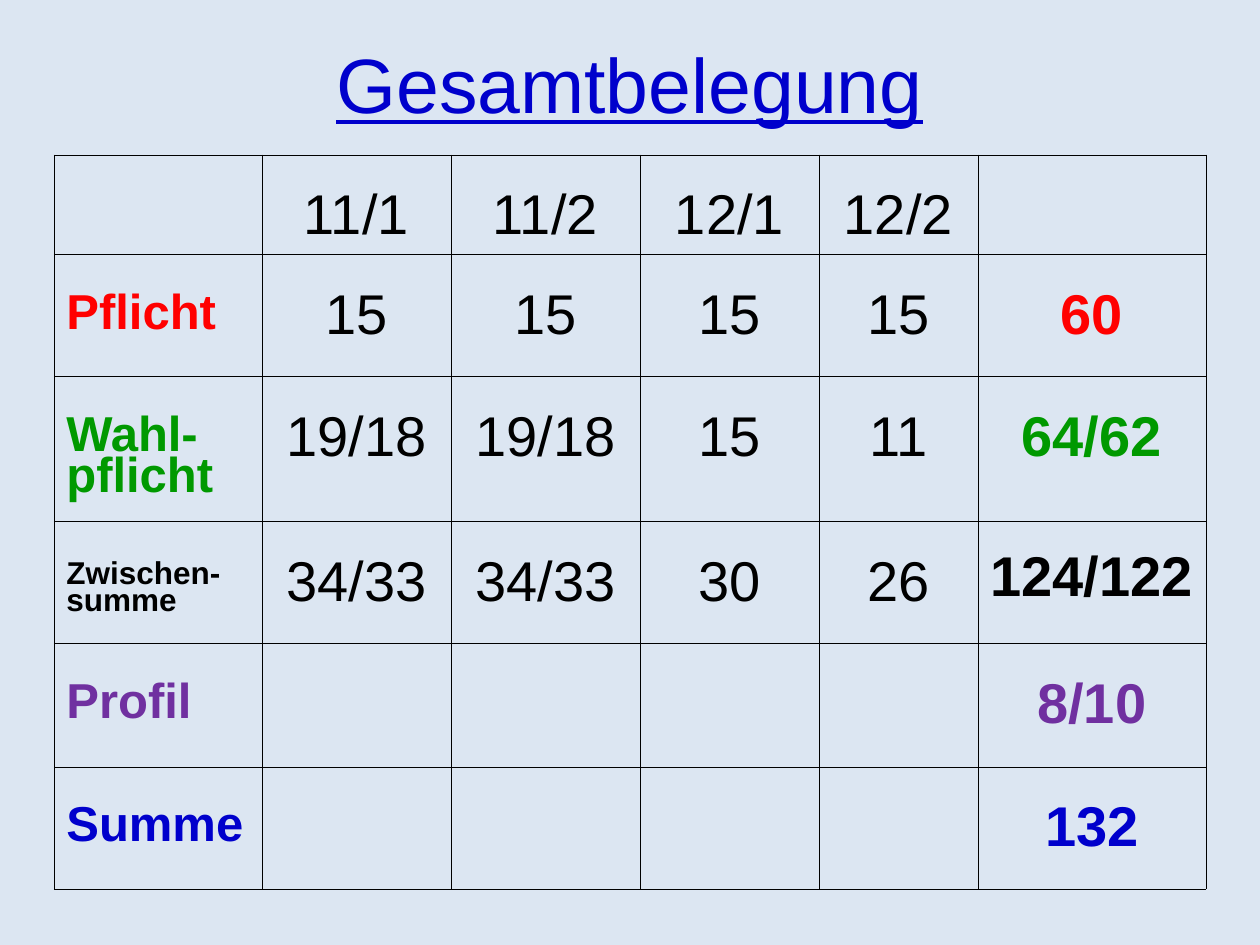
"""Build the slide with the table of course hours per term."""
from lxml import etree
from pptx import Presentation
from pptx.dml.color import RGBColor
from pptx.enum.text import MSO_ANCHOR, PP_ALIGN
from pptx.oxml.ns import qn
from pptx.util import Cm, Pt

CENTER, LEFT = PP_ALIGN.CENTER, PP_ALIGN.LEFT
MIDDLE = MSO_ANCHOR.MIDDLE

BACKGROUND = RGBColor(0xDC, 0xE6, 0xF2)
BLACK = RGBColor(0x00, 0x00, 0x00)
BLUE = RGBColor(0x00, 0x00, 0xCC)
RED = RGBColor(0xFF, 0x00, 0x00)
GREEN = RGBColor(0x00, 0x99, 0x00)
PURPLE = RGBColor(0x70, 0x30, 0xA0)

FONT = "Arial"
INNER, OUTER = Pt(0.06), Pt(0.11)
COLUMN_WIDTHS = [4.19, 3.81, 3.81, 3.61, 3.2, 4.6]
ROW_HEIGHTS = [2.01, 2.46, 2.92, 2.46, 2.49, 2.46]
ROWS = [
    (["", "11/1", "11/2", "12/1", "12/2", ""], BLACK),
    (["Pflicht", "15", "15", "15", "15", "60"], RED),
    (["Wahl-pflicht", "19/18", "19/18", "15", "11", "64/62"], GREEN),
    (["Zwischen-summe", "34/33", "34/33", "30", "26", "124/122"], BLACK),
    (["Profil", "", "", "", "", "8/10"], PURPLE),
    (["Summe", "", "", "", "", "132"], BLUE),
]


def write_text(tf, text, size=32, color=BLACK, bold=False, underline=False,
               align=CENTER, spacing=None, before=None):
    """Write one formatted paragraph into a text frame."""
    p = tf.paragraphs[0]
    p.alignment = align
    p.line_spacing = spacing
    p.space_before = before
    r = p.add_run()
    r.text = text
    r.font.name = FONT
    r.font.size = Pt(size)
    r.font.bold = bold
    r.font.underline = underline
    r.font.color.rgb = color


def add_title(s, text):
    """Place and fill the title placeholder."""
    sp = s.shapes.title
    sp.left, sp.top, sp.width, sp.height = Cm(1.27), Cm(0.08), Cm(22.86), Cm(3.18)
    sp.text_frame.vertical_anchor = MIDDLE
    write_text(sp.text_frame, text, size=44, color=BLUE, underline=True)


def set_borders(cell, widths):
    """Draw solid black cell borders from a mapping of side to width."""
    tc_pr = cell._tc.get_or_add_tcPr()
    for side, width in widths.items():
        ln = etree.SubElement(tc_pr, qn(f"a:ln{side}"), w=str(width))
        fill = etree.SubElement(ln, qn("a:solidFill"))
        etree.SubElement(fill, qn("a:srgbClr"), val=str(BLACK))


def fill_cell(cell, text, **text_format):
    """Set the margins and text of a cell."""
    compact = text == "124/122"
    cell.margin_left = cell.margin_right = Cm(0.25)
    cell.margin_top = Cm(0.74 if compact else 0.84)
    cell.margin_bottom = Cm(0.13)
    write_text(cell.text_frame, text, spacing=0.76,
               before=Pt(7 if compact else 8), **text_format)


def add_hours_table(s):
    """Add the table of hours, with coloured labels and totals."""
    last_row, last_col = len(ROWS) - 1, len(COLUMN_WIDTHS) - 1
    table = s.shapes.add_table(
        len(ROWS), len(COLUMN_WIDTHS), Cm(1.09), Cm(3.12),
        Cm(sum(COLUMN_WIDTHS)), Cm(sum(ROW_HEIGHTS))).table
    table.first_row = table.horz_banding = False
    for column, width in zip(table.columns, COLUMN_WIDTHS):
        column.width = Cm(width)
    for i, (texts, accent) in enumerate(ROWS):
        table.rows[i].height = Cm(ROW_HEIGHTS[i])
        for j, text in enumerate(texts):
            cell = table.cell(i, j)
            set_borders(cell, {
                "L": OUTER if j == 0 else INNER,
                "R": OUTER if j == last_col else INNER,
                "T": OUTER if i == 0 else INNER,
                "B": OUTER if i == last_row else INNER,
            })
            cell.fill.background()
            if not text:
                continue
            if j == 0:
                size = 18 if text == "Zwischen-summe" else 28
                fill_cell(cell, text, size=size, color=accent, bold=True, align=LEFT)
            elif j == last_col:
                fill_cell(cell, text, color=accent, bold=True)
            else:
                fill_cell(cell, text)


def main():
    """Create the presentation and save it."""
    prs = Presentation()
    prs.slide_width, prs.slide_height = Cm(25.4), Cm(19.05)
    s = prs.slides.add_slide(prs.slide_layouts.get_by_name("Title Only"))
    s.background.fill.solid()
    s.background.fill.fore_color.rgb = BACKGROUND
    add_title(s, "Gesamtbelegung")
    add_hours_table(s)
    prs.save("out.pptx")


if __name__ == "__main__":
    main()
